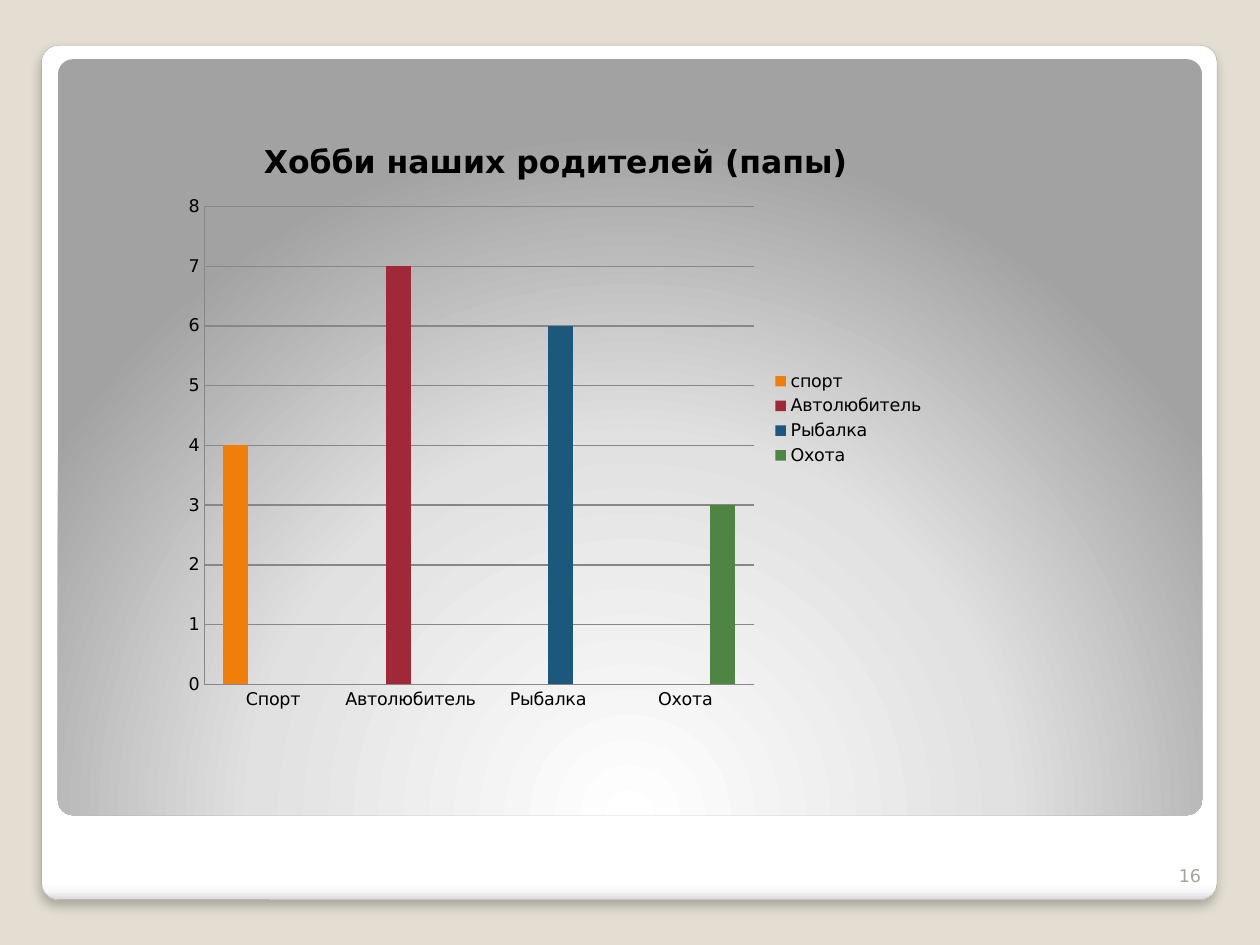
from lxml.etree import SubElement
from pptx import Presentation
from pptx.chart.data import CategoryChartData
from pptx.dml.color import RGBColor
from pptx.enum.chart import XL_CHART_TYPE, XL_LEGEND_POSITION, XL_TICK_MARK
from pptx.enum.shapes import MSO_SHAPE
from pptx.enum.text import MSO_ANCHOR, PP_ALIGN
from pptx.oxml.ns import qn
from pptx.util import Inches, Pt

HUES = {
    "back": "E3DED1", "edge": "A4A4A4", "text": "000000", "page": "A8A49B",
    "grid": "878787", "white": "FFFFFF", "pale": "F7F7F7", "rim": "DADADA",
    "mist": "E1E1E1", "gray": "A2A2A2", "orange": "F07F09", "red": "9F2936",
    "blue": "1B587C", "green": "4E8542",
}
COLS, ROWS = 100, 75


def tint(name):
    return RGBColor.from_string(HUES[name])


def node(root, tag, **attrs):
    return SubElement(root, qn(tag), {key: str(val) for key, val in attrs.items()})


class Deck:
    font = "DejaVu Sans"
    size = 10

    def __init__(self):
        self.prs = Presentation()
        self.prs.slide_width, self.prs.slide_height = Inches(10), Inches(7.5)
        self.slide = self.prs.slides.add_slide(self.prs.slide_layouts[6])
        fill = self.slide.background.fill
        fill.solid()
        fill.fore_color.rgb = tint("back")

    def area(self, left, top, wide, high):
        col, row = self.prs.slide_width / COLS, self.prs.slide_height / ROWS
        return [round(n) for n in (left * col, top * row, wide * col, high * row)]

    def style(self, font, hue="text", size=None, bold=False):
        font.name, font.size, font.bold = self.font, Pt(size or self.size), bold
        font.color.rgb = tint(hue)

    def panel(self, box, stops, focus=None, edge=None, shade=False):
        shape = self.slide.shapes.add_shape(MSO_SHAPE.ROUNDED_RECTANGLE, *self.area(*box))
        shape.adjustments[0] = 0.02
        shape.shadow.inherit = False
        shape.fill.background()
        if edge:
            shape.line.color.rgb = tint(edge)
            shape.line.width = Pt(0.16)
        else:
            shape.line.fill.background()
        props = shape.element.spPr
        grad = node(props, "a:gradFill", rotWithShape=1)
        props.replace(props.find(qn("a:noFill")), grad)
        marks = node(grad, "a:gsLst")
        for spot, hue in stops:
            node(node(marks, "a:gs", pos=spot * 1000), "a:srgbClr", val=HUES[hue])
        if focus:
            ring = node(grad, "a:path", path="circle")
            node(ring, "a:fillToRect", **{side: n * 1000 for side, n in zip("ltrb", focus)})
        else:
            node(grad, "a:lin", ang=90 * 60000, scaled=0)
        if shade:
            cast = node(props.find(qn("a:effectLst")), "a:outerShdw", blurRad=Pt(6),
                        dist=Pt(4), dir=90 * 60000, algn="t", rotWithShape=0)
            node(node(cast, "a:srgbClr", val=HUES["text"]), "a:alpha", val=25000)

    def label(self, box, text, hue):
        frame = self.slide.shapes.add_textbox(*self.area(*box)).text_frame
        frame.word_wrap = True
        frame.vertical_anchor = MSO_ANCHOR.BOTTOM
        frame.text = text
        line = frame.paragraphs[0]
        line.alignment = PP_ALIGN.RIGHT
        self.style(line.runs[0].font, hue)

    def chart(self, box, title, cats, bars, plot):
        data = CategoryChartData()
        data.categories = cats
        for i, (name, val, hue) in enumerate(bars):
            data.add_series(name, [val if i == j else None for j in range(len(cats))])
        chart = self.slide.shapes.add_chart(
            XL_CHART_TYPE.COLUMN_CLUSTERED, *self.area(*box), data).chart
        self.style(chart.font)
        chart.has_title = True
        chart.chart_title.include_in_layout = False
        head = chart.chart_title.text_frame
        head.text = title
        self.style(head.paragraphs[0].runs[0].font, size=18, bold=True)
        chart.has_legend = True
        chart.legend.position = XL_LEGEND_POSITION.RIGHT
        chart.legend.include_in_layout = False
        group = chart.plots[0]
        group.gap_width, group.overlap = 150, 0
        group.vary_by_categories = False
        for item, (name, val, hue) in zip(group.series, bars):
            item.format.fill.solid()
            item.format.fill.fore_color.rgb = tint(hue)
        axes = chart.category_axis, chart.value_axis
        for axis in axes:
            axis.major_tick_mark = axis.minor_tick_mark = XL_TICK_MARK.NONE
            axis.format.line.color.rgb = tint("grid")
        scale = axes[1]
        scale.minimum_scale, scale.maximum_scale, scale.major_unit = 0, 8, 1
        scale.has_major_gridlines = True
        scale.major_gridlines.format.line.color.rgb = tint("grid")
        self.place(chart, plot)

    def place(self, chart, plot):
        zone = chart.element.find(".//" + qn("c:plotArea"))
        old = zone.find(qn("c:layout"))
        if old is not None:
            zone.remove(old)
        rule = node(zone, "c:layout")
        zone.insert(0, rule)
        rule = node(rule, "c:manualLayout")
        node(rule, "c:layoutTarget", val="inner")
        for key in "xy":
            node(rule, f"c:{key}Mode", val="edge")
        for key, share in zip("xywh", plot):
            node(rule, f"c:{key}", val=share)


def main():
    deck = Deck()
    deck.panel((3.3, 3.6, 93.3, 67.8),
               [(0, "white"), (98, "white"), (99, "pale"), (100, "rim")],
               edge="edge", shade=True)
    deck.panel((4.6, 4.7, 90.8, 60), [(0, "white"), (55, "mist"), (100, "gray")],
               focus=(50, 175, 50, -75))
    deck.label((91.3, 66.8, 5, 4), "16", "page")
    deck.chart((13.8, 9.2, 60.6, 48), "Хобби наших родителей (папы)",
               ["Спорт", "Автолюбитель", "Рыбалка", "Охота"],
               [("спорт", 4, "orange"), ("Автолюбитель", 7, "red"),
                ("Рыбалка", 6, "blue"), ("Охота", 3, "green")],
               (0.04, 0.15, 0.72, 0.79))
    deck.prs.save("out.pptx")


if __name__ == "__main__":
    main()
